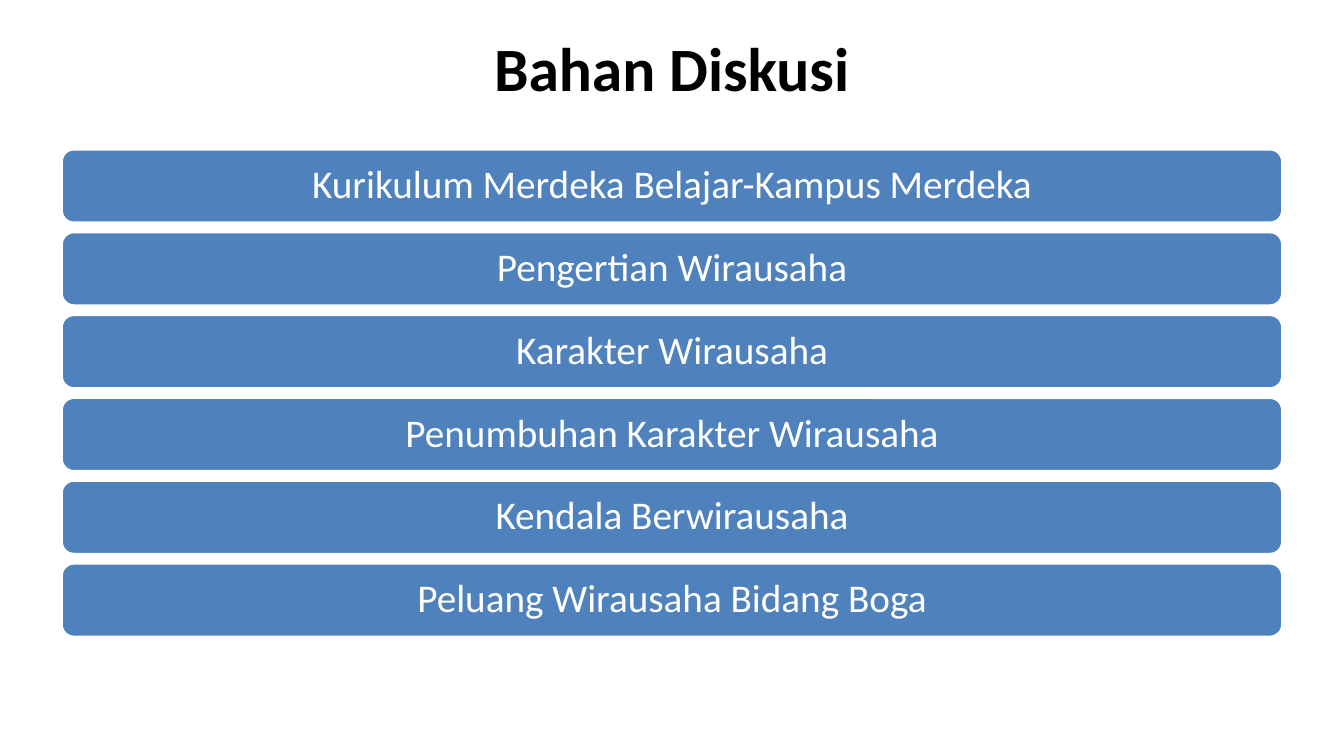
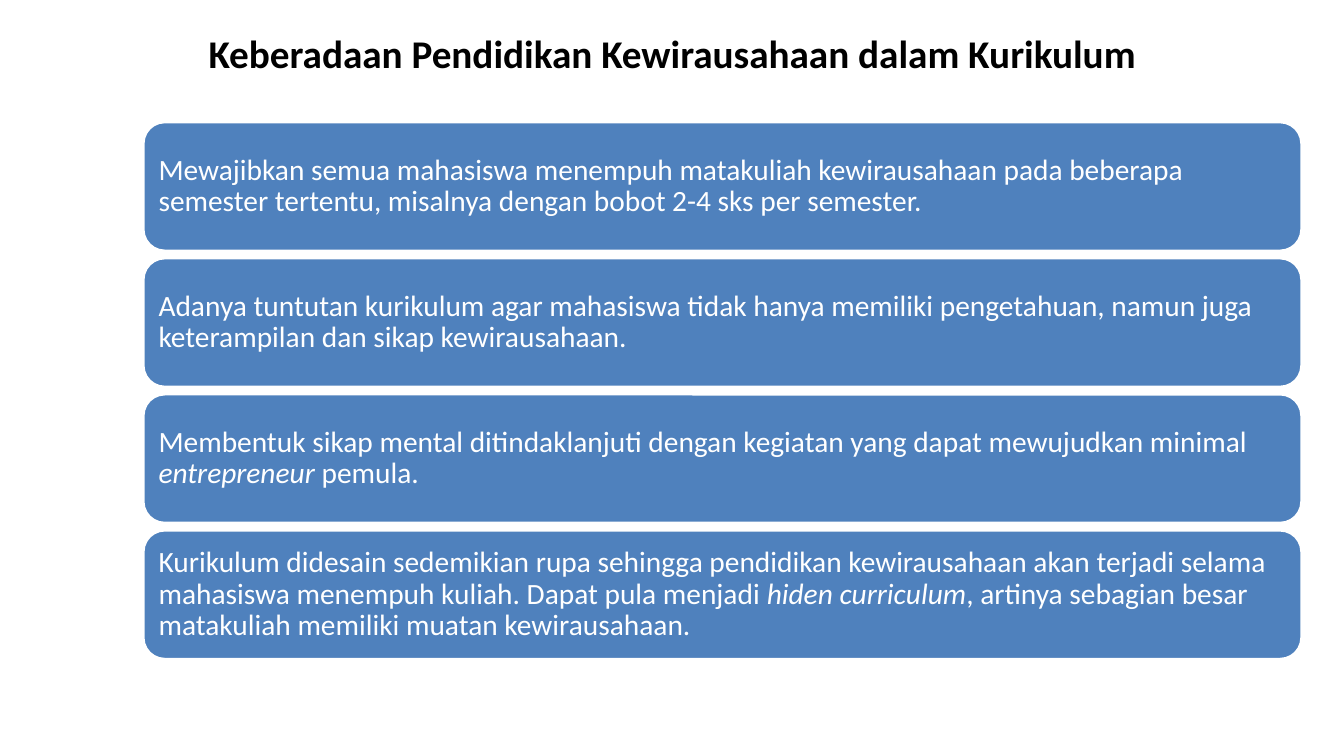
"""Build two slides of stacked rounded bars under a bold title."""
from pptx import Presentation
from pptx.dml.color import RGBColor
from pptx.enum.shapes import MSO_SHAPE
from pptx.enum.text import MSO_ANCHOR, MSO_AUTO_SIZE, PP_ALIGN
from pptx.util import Inches, Pt

ROUNDED = MSO_SHAPE.ROUNDED_RECTANGLE
MIDDLE = MSO_ANCHOR.MIDDLE
CENTER, LEFT = PP_ALIGN.CENTER, PP_ALIGN.LEFT
NO_AUTOFIT = MSO_AUTO_SIZE.NONE

FONT = "Calibri"
BLACK, WHITE, BLUE = "000000", "FFFFFF", "4F81BD"
TITLE_ONLY = 5
TITLE_TOP = 0.29

SLIDES = [
    {
        "title": "Bahan Diskusi",
        "title_box": (0.61, 12.11, 0.74),
        "title_size": 44,
        "bars": [
            "Kurikulum Merdeka Belajar-Kampus Merdeka",
            "Pengertian Wirausaha",
            "Karakter Wirausaha",
            "Penumbuhan Karakter Wirausaha",
            "Kendala Berwirausaha",
            "Peluang Wirausaha Bidang Boga",
        ],
        "stack": {"left": 0.61, "top": 1.48, "width": 12.11, "height": 4.84, "gap": 0.09},
        "text": {"size": 28, "align": CENTER, "inset": 0.12},
    },
    {
        "title": "Keberadaan Pendidikan Kewirausahaan dalam Kurikulum",
        "title_box": (1.42, 10.49, 0.47),
        "title_size": 28,
        "bars": [
            "Mewajibkan semua mahasiswa menempuh matakuliah kewirausahaan pada beberapa "
            "semester tertentu, misalnya dengan bobot 2-4 sks per semester.",
            "Adanya tuntutan kurikulum agar mahasiswa tidak hanya memiliki pengetahuan, "
            "namun juga keterampilan dan sikap kewirausahaan.",
            "Membentuk sikap mental ditindaklanjuti dengan kegiatan yang dapat mewujudkan "
            "minimal *entrepreneur *pemula.",
            "Kurikulum didesain sedemikian rupa sehingga pendidikan kewirausahaan akan "
            "terjadi selama mahasiswa menempuh kuliah. Dapat pula menjadi *hiden curriculum*, "
            "artinya sebagian besar matakuliah memiliki muatan kewirausahaan.",
        ],
        "stack": {"left": 1.42, "top": 1.21, "width": 11.49, "height": 5.33, "gap": 0.07},
        "text": {"size": 21, "align": LEFT, "inset": 0.09},
    },
]


def color(value):
    """Turn a hex string into a colour."""
    return RGBColor.from_string(value)


def format_text(shape, size, align, inset, text_color, bold=False):
    """Style the frame and first paragraph of a shape and return the paragraph."""
    frame = shape.text_frame
    frame.word_wrap = True
    frame.auto_size = NO_AUTOFIT
    frame.vertical_anchor = MIDDLE
    frame.margin_left = frame.margin_right = Inches(inset)
    frame.margin_top = frame.margin_bottom = Inches(inset)
    paragraph = frame.paragraphs[0]
    paragraph.alignment = align
    font = paragraph.font
    font.name, font.size, font.bold = FONT, Pt(size), bold
    font.color.rgb = color(text_color)
    return paragraph


def add_title(slide, text, box, size):
    """Fill and place the title placeholder."""
    title = slide.shapes.title
    left, width, height = box
    title.left, title.top = Inches(left), Inches(TITLE_TOP)
    title.width, title.height = Inches(width), Inches(height)
    title.text_frame.text = text
    format_text(title, size, CENTER, 0, BLACK, bold=True)


def add_bars(slide, texts, stack, style):
    """Stack equal bars; text between asterisks is italic."""
    gap = stack["gap"]
    height = (stack["height"] + gap) / len(texts) - gap
    for row, text in enumerate(texts):
        top = stack["top"] + row * (height + gap)
        bar = slide.shapes.add_shape(
            ROUNDED, Inches(stack["left"]), Inches(top), Inches(stack["width"]), Inches(height))
        bar.shadow.inherit = False
        bar.fill.solid()
        bar.fill.fore_color.rgb = color(BLUE)
        bar.line.color.rgb = color(WHITE)
        bar.line.width = Pt(2)
        paragraph = format_text(bar, text_color=WHITE, **style)
        paragraph.line_spacing = 0.9
        for index, part in enumerate(text.split("*")):
            run = paragraph.add_run()
            run.text = part
            if index % 2:
                run.font.italic = True


def main():
    """Create and save the presentation."""
    presentation = Presentation()
    presentation.slide_width, presentation.slide_height = Inches(13.33), Inches(7.5)
    for content in SLIDES:
        slide = presentation.slides.add_slide(presentation.slide_layouts[TITLE_ONLY])
        add_title(slide, content["title"], content["title_box"], content["title_size"])
        add_bars(slide, content["bars"], content["stack"], content["text"])
    presentation.save("out.pptx")


if __name__ == "__main__":
    main()
